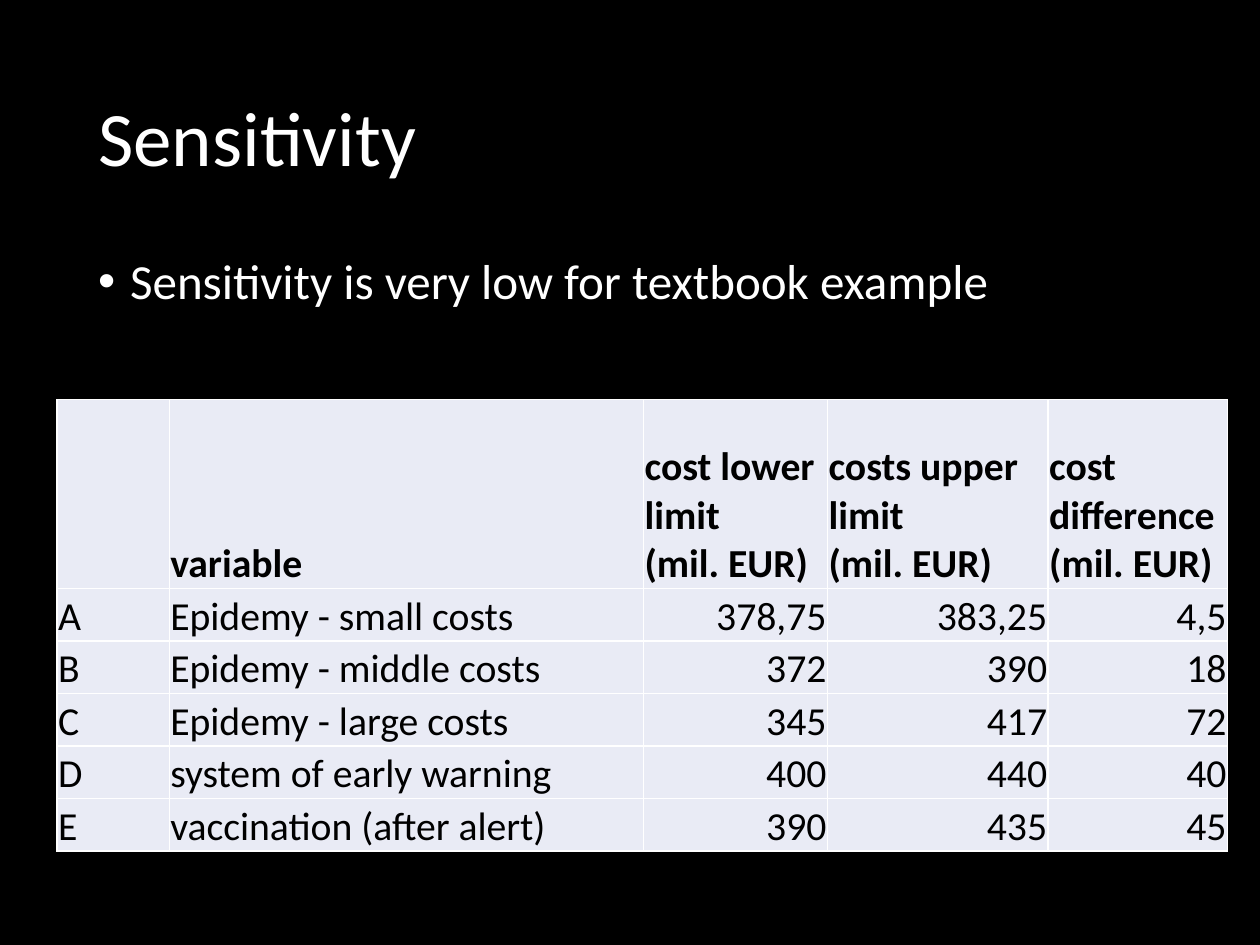
"""Build the sensitivity slide with its table of cost limits."""
from dataclasses import dataclass

from lxml import etree
from pptx import Presentation
from pptx.dml.color import RGBColor
from pptx.enum.text import MSO_ANCHOR, PP_ALIGN
from pptx.oxml.ns import qn
from pptx.slide import Slide
from pptx.table import _Cell
from pptx.text.text import _Paragraph
from pptx.util import Pt

LEFT, RIGHT = PP_ALIGN.LEFT, PP_ALIGN.RIGHT
MIDDLE, BOTTOM = MSO_ANCHOR.MIDDLE, MSO_ANCHOR.BOTTOM
TITLE_ONLY = 5
SLIDE_WIDTH, SLIDE_HEIGHT = 793.7, 595.28


@dataclass(frozen=True)
class Theme:
    font: str = "Calibri"
    background: str = "000000"
    light_text: str = "FFFFFF"
    table_text: str = "000000"
    cell_fill: str = "E9EBF5"
    border: str = "FFFFFF"
    title_size: float = 48.5
    body_size: float = 30.9
    table_size: float = 25


@dataclass(frozen=True)
class Column:
    heading: str
    width: float
    align: PP_ALIGN


@dataclass(frozen=True)
class Box:
    left: float
    top: float
    width: float
    height: float


THEME = Theme()
TITLE_BOX = Box(54.7, 31.7, 684.7, 115.2)
BODY_BOX = Box(54.7, 158.4, 684.7, 378)
TABLE_BOX = Box(36, 251.8, 737.3, 284.4)
HEADER_HEIGHT, ROW_HEIGHT = 118.8, 33.12
BULLET_INDENT = 20.2

COLUMNS = (
    Column("", 70.6, LEFT),
    Column("variable", 298.8, LEFT),
    Column("cost lower limit\n(mil. EUR)", 115.9, RIGHT),
    Column("costs upper limit\n(mil. EUR)", 139, RIGHT),
    Column("cost difference (mil. EUR)", 113, RIGHT),
)
VARIABLES = (
    ("A", "Epidemy - small costs", "378,75", "383,25", "4,5"),
    ("B", "Epidemy - middle costs", "372", "390", "18"),
    ("C", "Epidemy - large costs", "345", "417", "72"),
    ("D", "system of early warning", "400", "440", "40"),
    ("E", "vaccination (after alert)", "390", "435", "45"),
)


def style(paragraph: _Paragraph, size: float, color: str, bold: bool = False) -> None:
    font = paragraph.font
    font.name, font.size, font.bold = THEME.font, Pt(size), bold
    font.color.rgb = RGBColor.from_string(color)


def add_title(slide: Slide, text: str) -> None:
    title = slide.shapes.title
    title.left, title.top = Pt(TITLE_BOX.left), Pt(TITLE_BOX.top)
    title.width, title.height = Pt(TITLE_BOX.width), Pt(TITLE_BOX.height)
    title.text_frame.text = text
    title.text_frame.vertical_anchor = MIDDLE
    heading = title.text_frame.paragraphs[0]
    heading.alignment, heading.line_spacing = LEFT, 0.9
    style(heading, THEME.title_size, THEME.light_text)


def add_bullet(slide: Slide, text: str) -> None:
    body = slide.shapes.add_textbox(
        Pt(BODY_BOX.left), Pt(BODY_BOX.top), Pt(BODY_BOX.width), Pt(BODY_BOX.height)
    )
    body.text_frame.word_wrap = True
    statement = body.text_frame.paragraphs[0]
    statement.text = text
    statement.line_spacing, statement.space_before = 0.9, Pt(11)
    style(statement, THEME.body_size, THEME.light_text)
    properties = statement._p.get_or_add_pPr()
    properties.set("marL", str(Pt(BULLET_INDENT)))
    properties.set("indent", str(-Pt(BULLET_INDENT)))
    bullet_font = etree.Element(qn("a:buFont"), typeface="Arial")
    bullet = etree.Element(qn("a:buChar"), char="•")
    properties.find(qn("a:defRPr")).addprevious(bullet_font)
    bullet_font.addnext(bullet)


def add_borders(cell: _Cell) -> None:
    properties = cell._tc.get_or_add_tcPr()
    for position, edge in enumerate(("a:lnL", "a:lnR", "a:lnT", "a:lnB")):
        line = etree.Element(qn(edge), w=str(Pt(1)))
        fill = etree.SubElement(line, qn("a:solidFill"))
        etree.SubElement(fill, qn("a:srgbClr"), val=THEME.border)
        properties.insert(position, line)


def fill_cell(cell: _Cell, text: str, align: PP_ALIGN, bold: bool) -> None:
    cell.fill.solid()
    cell.fill.fore_color.rgb = RGBColor.from_string(THEME.cell_fill)
    cell.vertical_anchor = BOTTOM
    cell.margin_left = cell.margin_right = cell.margin_top = Pt(0.7)
    cell.margin_bottom = Pt(0)
    cell.text_frame.text = text
    for paragraph in cell.text_frame.paragraphs:
        paragraph.alignment = align
        style(paragraph, THEME.table_size, THEME.table_text, bold)
    add_borders(cell)


def add_cost_table(slide: Slide) -> None:
    costs = slide.shapes.add_table(
        len(VARIABLES) + 1, len(COLUMNS),
        Pt(TABLE_BOX.left), Pt(TABLE_BOX.top), Pt(TABLE_BOX.width), Pt(TABLE_BOX.height),
    ).table
    costs.first_row = costs.horz_banding = False
    for index, row in enumerate(costs.rows):
        row.height = Pt(ROW_HEIGHT if index else HEADER_HEIGHT)
    for index, column in enumerate(COLUMNS):
        costs.columns[index].width = Pt(column.width)
        fill_cell(costs.cell(0, index), column.heading, LEFT, True)
        for number, variable in enumerate(VARIABLES, start=1):
            fill_cell(costs.cell(number, index), variable[index], column.align, False)


def main() -> None:
    presentation = Presentation()
    presentation.slide_width, presentation.slide_height = Pt(SLIDE_WIDTH), Pt(SLIDE_HEIGHT)
    slide = presentation.slides.add_slide(presentation.slide_layouts[TITLE_ONLY])
    slide.background.fill.solid()
    slide.background.fill.fore_color.rgb = RGBColor.from_string(THEME.background)
    add_title(slide, "Sensitivity")
    add_bullet(slide, "Sensitivity is very low for textbook example")
    add_cost_table(slide)
    presentation.save("out.pptx")


if __name__ == "__main__":
    main()
